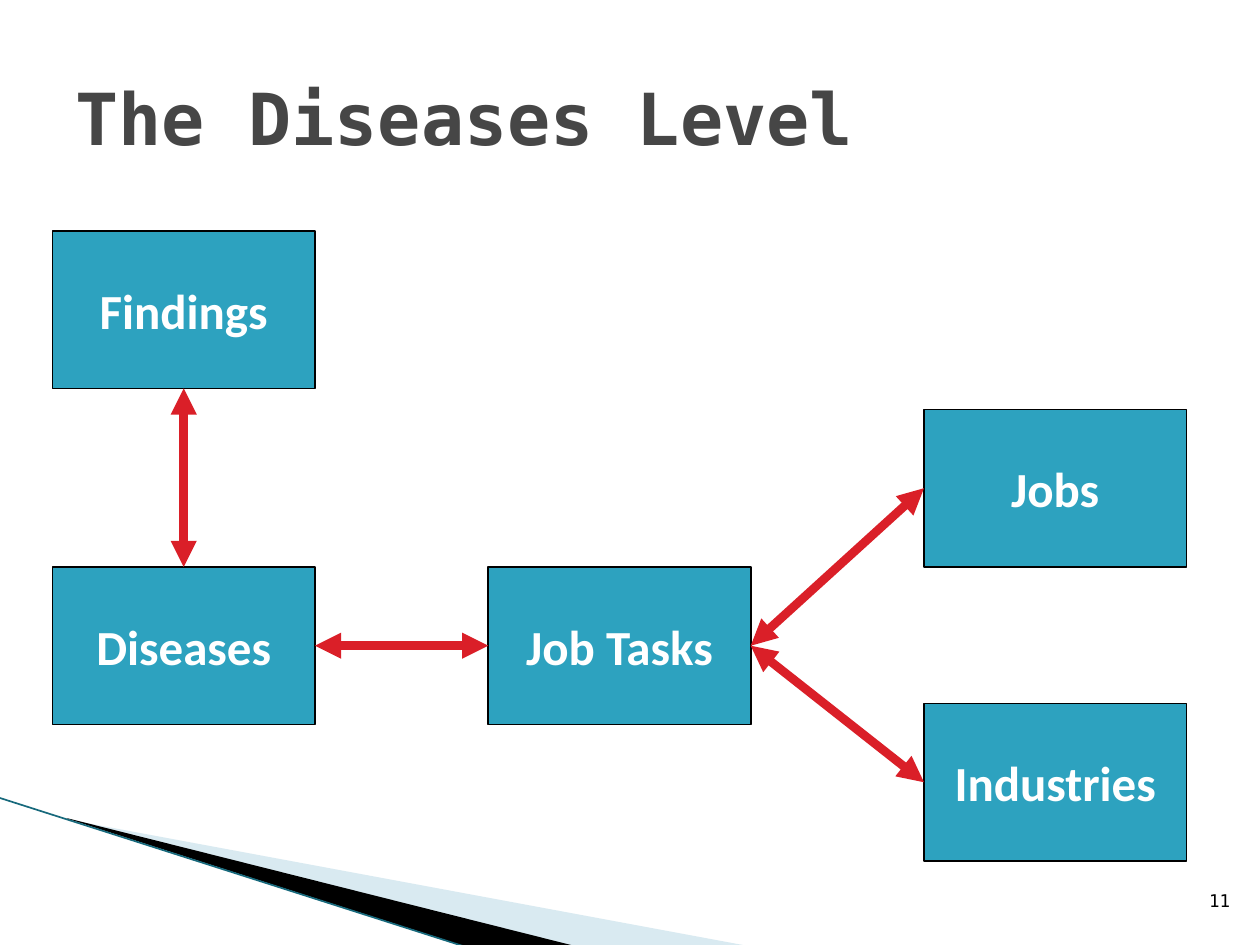
from dataclasses import dataclass

from lxml import etree
from pptx import Presentation
from pptx.dml.color import RGBColor
from pptx.enum.shapes import MSO_CONNECTOR, MSO_SHAPE
from pptx.enum.text import MSO_ANCHOR, MSO_AUTO_SIZE, PP_ALIGN
from pptx.oxml.ns import qn
from pptx.util import Pt

RECT = MSO_SHAPE.RECTANGLE
STRAIGHT = MSO_CONNECTOR.STRAIGHT
MIDDLE = MSO_ANCHOR.MIDDLE
NO_FIT = MSO_AUTO_SIZE.NONE
LEFT, CENTER, RIGHT = PP_ALIGN.LEFT, PP_ALIGN.CENTER, PP_ALIGN.RIGHT
TOP_SIDE, LEFT_SIDE, BOTTOM_SIDE, RIGHT_SIDE = range(4)


@dataclass(frozen=True)
class Theme:
    mono: str = "DejaVu Sans Mono"
    sans: str = "Calibri"
    title: RGBColor = RGBColor(0x46, 0x46, 0x46)
    box: RGBColor = RGBColor(0x2D, 0xA2, 0xBF)
    arrow: RGBColor = RGBColor(0xDA, 0x1F, 0x28)
    pale: RGBColor = RGBColor(0xA0, 0xCB, 0xDC)
    edge: RGBColor = RGBColor(0x17, 0x69, 0x7C)
    black: RGBColor = RGBColor(0, 0, 0)
    white: RGBColor = RGBColor(255, 255, 255)
    title_size: int = 41
    box_size: int = 28
    page_size: int = 10


def write(frame, text, face, size, color, align, bold=False):
    frame.text = text
    para = frame.paragraphs[0]
    para.alignment = align
    font = para.font
    font.name, font.size, font.bold = face, Pt(size), bold
    font.color.rgb = color


def draw_line(start, end, color, width):
    line = slide.shapes.add_connector(
        STRAIGHT, *(Pt(value) for value in (*start, *end))
    )
    line.line.color.rgb = color
    line.line.width = Pt(width)
    etree.SubElement(line._element.spPr, qn("a:effectLst"))
    return line


theme = Theme()
deck = Presentation()
deck.slide_width, deck.slide_height = Pt(720), Pt(540)
slide = deck.slides.add_slide(deck.slide_layouts[5])

wedges = [
    ([(39.6, 468.5), (428.4, 540.7), (328.3, 540.7), (39.6, 468)], theme.pale, 40),
    ([(38.2, 467.5), (329, 540.7), (267.8, 541.4), (38.9, 468)], theme.black, 100),
]
for points, color, alpha in wedges:
    spots = [(Pt(x), Pt(y)) for x, y in points]
    path = slide.shapes.build_freeform(*spots[0])
    path.add_line_segments(spots[1:])
    wedge = path.convert_to_shape()
    wedge.shadow.inherit = False
    wedge.fill.solid()
    wedge.fill.fore_color.rgb = color
    wedge.line.fill.background()
    if alpha < 100:
        tint = wedge._element.spPr.find(qn("a:solidFill"))[0]
        etree.SubElement(tint, qn("a:alpha"), val=str(alpha * 1000))

draw_line((-0.7, 455.8), (267.1, 541.4), theme.edge, 0.95)

page = slide.shapes.add_textbox(Pt(681), Pt(505), Pt(29), Pt(29))
page.text_frame.word_wrap = True
write(page.text_frame, "11", theme.mono, theme.page_size, theme.black, RIGHT)

title = slide.shapes.title
title.left, title.top, title.width, title.height = Pt(36), Pt(21.6), Pt(648), Pt(90)
title.text_frame.vertical_anchor = MIDDLE
title.text_frame.auto_size = NO_FIT
write(title.text_frame, "The Diseases Level", theme.mono, theme.title_size,
      theme.title, LEFT, True)

boxes = {}
for name, x, y in [
    ("Findings", 30, 132),
    ("Diseases", 30, 324),
    ("Job Tasks", 279, 324),
    ("Industries", 528, 402),
    ("Jobs", 528, 234),
]:
    box = slide.shapes.add_shape(RECT, Pt(x), Pt(y), Pt(150), Pt(90))
    box.shadow.inherit = False
    box.fill.solid()
    box.fill.fore_color.rgb = theme.box
    box.line.color.rgb = theme.black
    box.line.width = Pt(1)
    box.text_frame.word_wrap = False
    box.text_frame.vertical_anchor = MIDDLE
    write(box.text_frame, name, theme.sans, theme.box_size, theme.white, CENTER, True)
    boxes[name] = box

for first, side, second, target in [
    ("Diseases", RIGHT_SIDE, "Job Tasks", LEFT_SIDE),
    ("Job Tasks", RIGHT_SIDE, "Industries", LEFT_SIDE),
    ("Job Tasks", RIGHT_SIDE, "Jobs", LEFT_SIDE),
    ("Findings", BOTTOM_SIDE, "Diseases", TOP_SIDE),
]:
    arrow = draw_line((0, 0), (0, 0), theme.arrow, 5)
    arrow.begin_connect(boxes[first], side)
    arrow.end_connect(boxes[second], target)
    for end in ("a:headEnd", "a:tailEnd"):
        etree.SubElement(arrow.line._get_or_add_ln(), qn(end), type="triangle")

deck.save("out.pptx")
